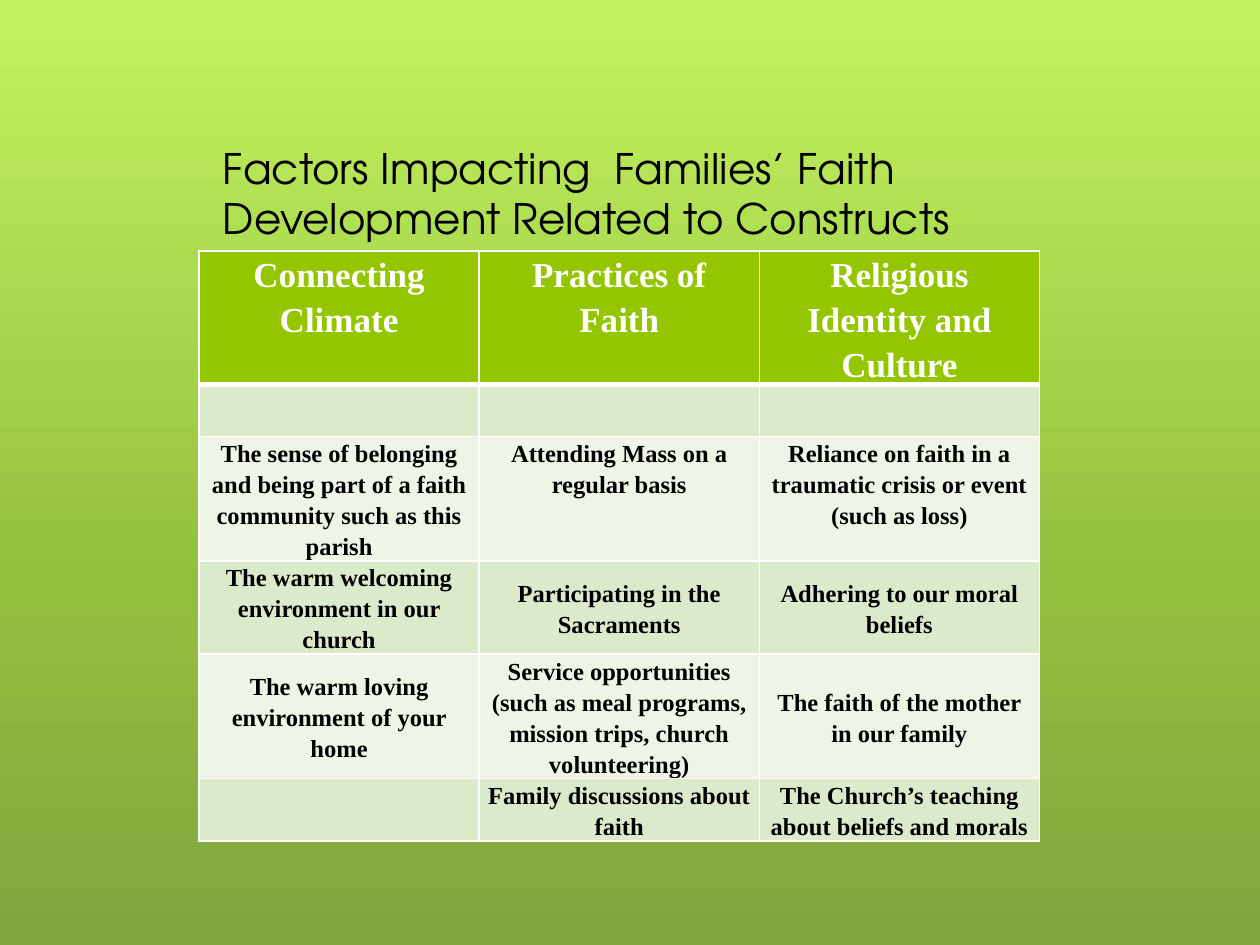
from copy import deepcopy

from lxml import etree
from pptx import Presentation
from pptx.dml.color import RGBColor
from pptx.enum.text import MSO_ANCHOR, PP_ALIGN
from pptx.oxml.ns import qn
from pptx.util import Inches, Pt

CENTER = PP_ALIGN.CENTER
TOP, MIDDLE = MSO_ANCHOR.TOP, MSO_ANCHOR.MIDDLE

WHITE = RGBColor(0xFF, 0xFF, 0xFF)
BLACK = RGBColor(0x00, 0x00, 0x00)
GREEN = RGBColor(0x94, 0xC6, 0x00)
BANDS = (RGBColor(0xEE, 0xF5, 0xE7), RGBColor(0xDC, 0xEA, 0xCC))
STOPS = (
    (0, RGBColor(0xC3, 0xF3, 0x5F)),
    (0.62, RGBColor(0x93, 0xBF, 0x3F)),
    (1, RGBColor(0x81, 0xA5, 0x3E)),
)

TITLE = "Factors Impacting  Families’ Faith Development Related to Constructs"
ROWS = (
    (0.46, ("Connecting Climate", "Practices of Faith", "Religious Identity and Culture")),
    (0.41, ("", "", "")),
    (0.93, (
        "The sense of belonging and being part of a faith community such as this parish",
        "Attending Mass on a regular basis",
        "Reliance on faith in a traumatic crisis or event (such as loss)",
    )),
    (0.46, (
        "The warm welcoming environment in our church",
        "Participating in the Sacraments",
        "Adhering to our moral beliefs",
    )),
    (0.69, (
        "The warm loving environment of your home",
        "Service opportunities (such as meal programs, mission trips, church volunteering)",
        "The faith of the mother in our family",
    )),
    (0.46, (
        "",
        "Family discussions about faith",
        "The Church’s teaching about beliefs and morals",
    )),
)


def add_run(para, text, font, size, color, bold=False):
    run = para.add_run()
    run.text = text
    run.font.name = font
    run.font.size = Pt(size)
    run.font.bold = bold
    run.font.color.rgb = color


def paint_back(slide):
    fill = slide.background.fill
    fill.gradient()
    fill.gradient_angle = 270
    stops = slide.element.find(".//" + qn("a:gsLst"))
    stops.append(deepcopy(stops[-1]))
    for stop, (place, color) in zip(fill.gradient_stops, STOPS):
        stop.position = place
        stop.color.rgb = color


def add_title(slide):
    box = slide.shapes.add_textbox(Inches(1.67), Inches(1.08), Inches(7.08), Inches(0.91))
    box.text_frame.word_wrap = True
    add_run(box.text_frame.paragraphs[0], TITLE, "TeX Gyre Adventor", 24, BLACK)


def set_edges(cell, widths):
    props = cell._tc.get_or_add_tcPr()
    for spot, (side, width) in enumerate(widths.items()):
        line = etree.Element(qn("a:ln" + side), w=str(Pt(width)))
        fill = etree.SubElement(line, qn("a:solidFill"))
        etree.SubElement(fill, qn("a:srgbClr"), val=str(WHITE))
        props.insert(spot, line)


def fill_cell(cell, text, row):
    head = row == 0
    cell.fill.solid()
    cell.fill.fore_color.rgb = GREEN if head else BANDS[row % 2]
    set_edges(cell, {"L": 1, "R": 1, "T": 3 if row == 1 else 1, "B": 3 if head else 1})
    if not text:
        return
    cell.margin_left = cell.margin_right = Inches(0.07)
    cell.margin_top = cell.margin_bottom = 0
    cell.vertical_anchor = MIDDLE if row > 2 else TOP
    para = cell.text_frame.paragraphs[0]
    para.alignment = CENTER
    para.line_spacing = 1.15
    size, color = (20, WHITE) if head else (14, BLACK)
    add_run(para, text, "Times New Roman", size, color, True)


def add_grid(slide):
    frame = slide.shapes.add_table(
        len(ROWS), 3, Inches(1.58), Inches(1.99), Inches(6.67), Inches(4.93))
    table = frame.table
    table.horz_banding = False
    for row, (height, texts) in enumerate(ROWS):
        table.rows[row].height = Inches(height)
        for col, text in enumerate(texts):
            fill_cell(table.cell(row, col), text, row)
    frame.height = Inches(4.93)


def main():
    deck = Presentation()
    deck.slide_width, deck.slide_height = Inches(10), Inches(7.5)
    slide = deck.slides.add_slide(deck.slide_layouts[6])
    paint_back(slide)
    add_grid(slide)
    add_title(slide)
    deck.save("out.pptx")


if __name__ == "__main__":
    main()
